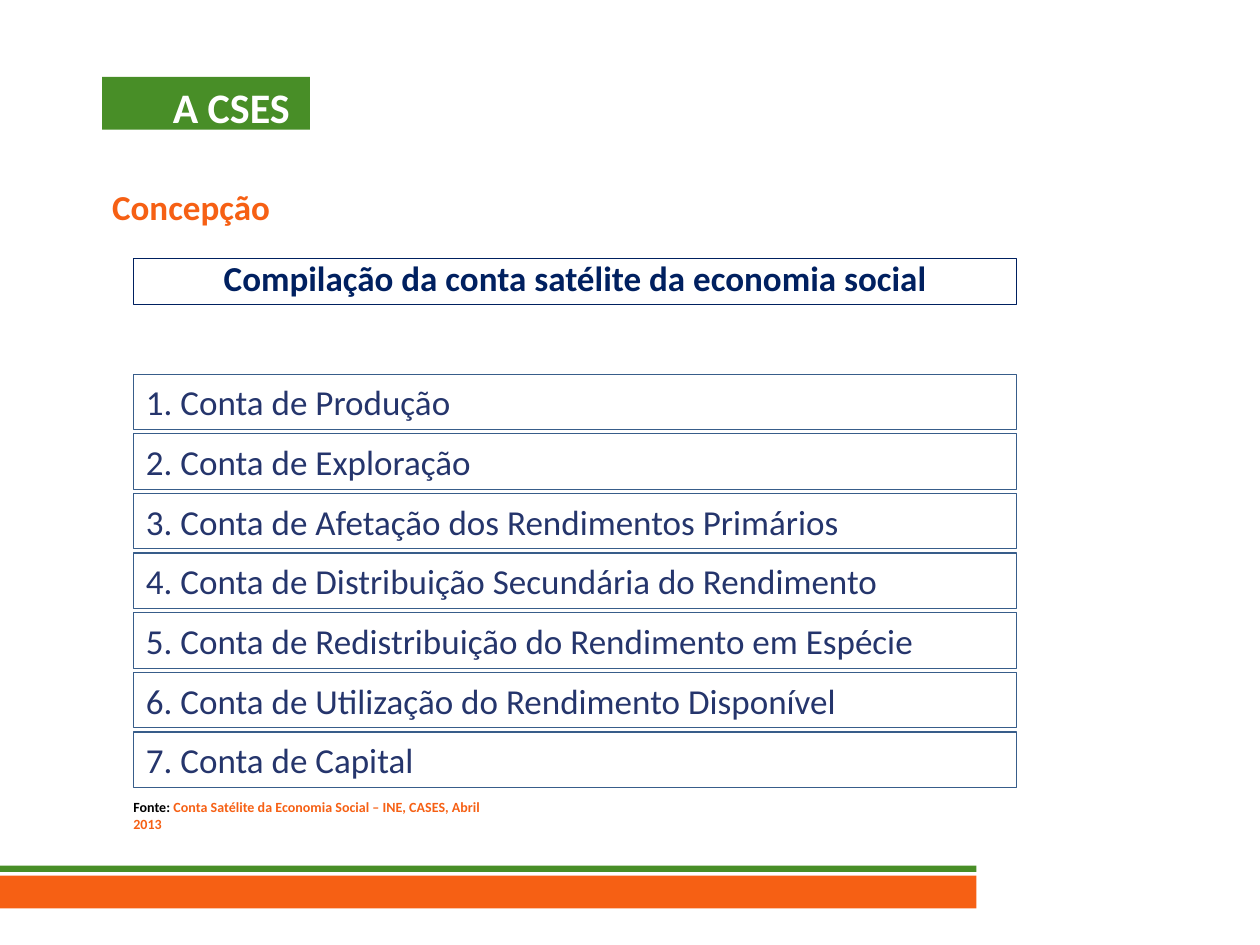
from pptx import Presentation
from pptx.dml.color import RGBColor
from pptx.enum.shapes import MSO_SHAPE as Shape
from pptx.enum.text import MSO_ANCHOR as Anchor, MSO_AUTO_SIZE as AutoSize, PP_ALIGN as Align
from pptx.util import Inches, Pt

COLORS = {
    "orange": "F66014",
    "green": "488E27",
    "navy": "002060",
    "indigo": "25356C",
    "border": "385D8A",
    "white": "FFFFFF",
    "black": "000000",
}
ACCOUNTS = [
    "Conta de Produção",
    "Conta de Exploração",
    "Conta de Afetação dos Rendimentos Primários",
    "Conta de Distribuição Secundária do Rendimento",
    "Conta de Redistribuição do Rendimento em Espécie",
    "Conta de Utilização do Rendimento Disponível",
    "Conta de Capital",
]
LEFT, WIDTH = 1.06, 7.01
ACCOUNTS_TOP, ROW_HEIGHT, ROW_PITCH = 2.97, 0.44, 2.84 / 6


def rgb(name):
    return RGBColor.from_string(COLORS[name])


def write(p, text, size=20, color="black", bold=False, font="Calibri"):
    r = p.add_run()
    r.text = text
    r.font.name, r.font.size, r.font.bold = font, Pt(size), bold
    r.font.color.rgb = rgb(color)


class SlideBuilder:
    def __init__(self, prs):
        self.slide = prs.slides.add_slide(prs.slide_layouts[5])

    def paragraph(self, s, align=Align.LEFT, anchor=Anchor.MIDDLE, insets=(0.1, 0.05, 0.1, 0.05)):
        """Set up the text frame of a shape and return its first paragraph."""
        tf = s.text_frame
        tf.word_wrap, tf.auto_size, tf.vertical_anchor = True, AutoSize.NONE, anchor
        tf.margin_left, tf.margin_top, tf.margin_right, tf.margin_bottom = map(Inches, insets)
        p = tf.paragraphs[0]
        p.alignment = align
        return p

    def title(self, text, x, y, w, h):
        s = self.slide.shapes.title
        s.left, s.top, s.width, s.height = map(Inches, (x, y, w, h))
        s.fill.solid()
        s.fill.fore_color.rgb = rgb("green")
        p = self.paragraph(s, Align.RIGHT, insets=(0, 0.06, 0.16, 0))
        write(p, text, size=24, color="white", bold=True)

    def rectangle(self, x, y, w, h, fill=None, line=None):
        s = self.slide.shapes.add_shape(Shape.RECTANGLE, *map(Inches, (x, y, w, h)))
        s.shadow.inherit = False
        if fill:
            s.fill.solid()
            s.fill.fore_color.rgb = rgb(fill)
        else:
            s.fill.background()
        if line:
            s.line.color.rgb = rgb(line)
            s.line.width = Pt(0.75)
        else:
            s.line.fill.background()
        return s

    def text_box(self, x, y, w, h, **layout):
        s = self.slide.shapes.add_textbox(*map(Inches, (x, y, w, h)))
        return self.paragraph(s, **layout)


def main():
    prs = Presentation()
    prs.slide_width, prs.slide_height = Inches(10), Inches(7.5)
    b = SlideBuilder(prs)

    b.rectangle(0, 6.95, 7.75, 0.26, fill="orange")
    b.rectangle(0, 6.87, 7.75, 0.05, fill="green")
    b.title("A CSES", 0.81, 0.61, 1.65, 0.42)

    p = b.text_box(0.73, 1.17, 3.55, 0.93, insets=(0.16, 0.05, 0.1, 0.05))
    write(p, "Concepção", color="orange", bold=True)

    for i, account in enumerate(ACCOUNTS):
        s = b.rectangle(LEFT, ACCOUNTS_TOP + i * ROW_PITCH, WIDTH, ROW_HEIGHT, line="border")
        write(b.paragraph(s), f"{i + 1}. {account}", color="indigo")

    s = b.rectangle(LEFT, 2.05, WIDTH, 0.37, line="navy")
    p = b.paragraph(s, Align.CENTER)
    p.line_spacing = 0.8
    write(p, "Compilação da conta satélite da economia social", color="navy", bold=True)

    p = b.text_box(0.96, 6.29, 3.19, 0.67, anchor=Anchor.TOP)
    write(p, "Fonte: ", size=8, bold=True)
    write(p, "Conta Satélite da Economia Social – INE, CASES, Abril 2013",
          size=8, color="orange", bold=True)

    prs.save("out.pptx")


if __name__ == "__main__":
    main()
